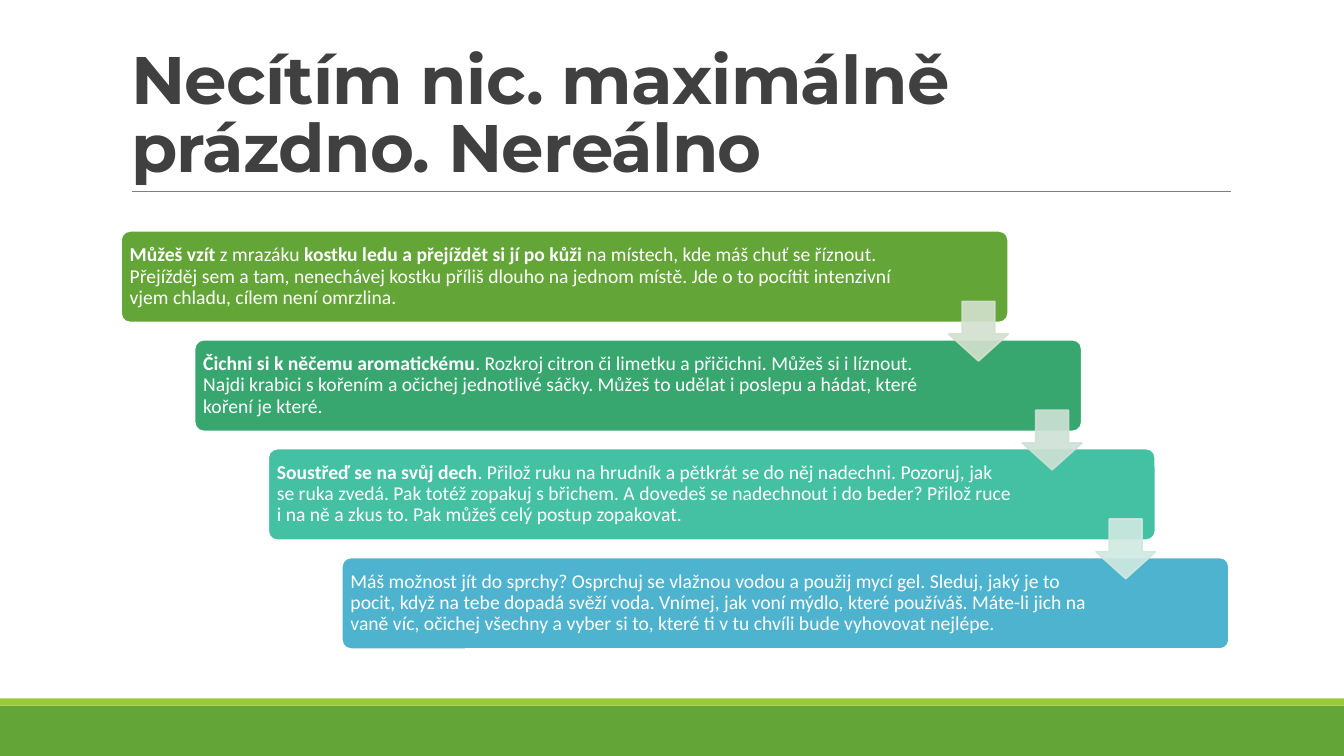
from dataclasses import dataclass

from lxml.etree import SubElement
from pptx import Presentation
from pptx.dml.color import RGBColor
from pptx.enum.shapes import MSO_CONNECTOR, MSO_SHAPE
from pptx.enum.text import MSO_ANCHOR, MSO_AUTO_SIZE, PP_ALIGN
from pptx.oxml.ns import qn
from pptx.util import Inches, Pt

COLORS = {
    "green": "63A537",
    "lime": "99CB38",
    "emerald": "37A76F",
    "teal": "44C1A3",
    "blue": "4EB3CF",
    "green_pale": "D3E1CE",
    "emerald_pale": "CEE1D5",
    "teal_pale": "CFE9E0",
    "rule": "808080",
    "title": "404040",
    "white": "FFFFFF",
}
STEP_X, STEP_Y = 0.73, 1.08


@dataclass
class Run:
    text: str
    bold: bool = False


@dataclass
class Step:
    color: str
    runs: list[Run]
    margin_right: float = 1.38


STEPS = [
    Step("green", [
        Run("Můžeš vzít", True),
        Run(" z mrazáku "),
        Run("kostku ledu a přejíždět si jí po kůži", True),
        Run(" na místech, kde máš chuť se říznout. Přejížděj sem a tam, "
            "nenechávej kostku příliš dlouho na jednom místě. Jde o to pocítit "
            "intenzivní vjem chladu, cílem není omrzlina."),
    ], 1.06),
    Step("emerald", [
        Run("Čichni si k něčemu aromatickému", True),
        Run(". Rozkroj citron či limetku a přičichni. Můžeš si i líznout. "
            "Najdi krabici s kořením a očichej jednotlivé sáčky. Můžeš to "
            "udělat i poslepu a hádat, které koření je které."),
    ]),
    Step("teal", [
        Run("Soustřeď se na svůj dech", True),
        Run(". Přilož ruku na hrudník a pětkrát se do něj nadechni. Pozoruj, "
            "jak se ruka zvedá. Pak totéž zopakuj s břichem. A dovedeš se "
            "nadechnout i do beder? Přilož ruce i na ně a zkus to. Pak můžeš "
            "celý postup zopakovat."),
    ]),
    Step("blue", [
        Run("Máš možnost jít do sprchy? Osprchuj se vlažnou vodou a použij "
            "mycí gel. Sleduj, jaký je to pocit, když na tebe dopadá svěží "
            "voda. Vnímej, jak voní mýdlo, které používáš. Máte-li jich na "
            "vaně víc, očichej všechny a vyber si to, které ti v tu chvíli "
            "bude vyhovovat nejlépe."),
    ]),
]
ARROW_COLORS = ["green_pale", "emerald_pale", "teal_pale"]


def rgb(name: str) -> RGBColor:
    return RGBColor.from_string(COLORS[name])


def add_filled(slide, kind, left: float, top: float, width: float, height: float,
               fill: str, line: str | None = None):
    shape = slide.shapes.add_shape(
        kind, Inches(left), Inches(top), Inches(width), Inches(height))
    shape.shadow.inherit = False
    shape.fill.solid()
    shape.fill.fore_color.rgb = rgb(fill)
    if line:
        shape.line.color.rgb = rgb(line)
        shape.line.width = Pt(1.25)
    else:
        shape.line.fill.background()
    return shape


def add_title(slide, text: str) -> None:
    title = slide.shapes.title
    title.left, title.top = Inches(1.2), Inches(0.31)
    title.width, title.height = Inches(11), Inches(1.59)
    frame = title.text_frame
    frame.text = text
    frame.word_wrap = True
    frame.auto_size = MSO_AUTO_SIZE.NONE
    frame.vertical_anchor = MSO_ANCHOR.BOTTOM
    paragraph = frame.paragraphs[0]
    paragraph.alignment = PP_ALIGN.LEFT
    paragraph.line_spacing = 0.85
    font = paragraph.font
    font.name, font.size, font.bold = "Montserrat", Pt(48), True
    font.color.rgb = rgb("title")
    paragraph.runs[0].font._element.set("spc", "-50")


def add_rule(slide) -> None:
    rule = slide.shapes.add_connector(
        MSO_CONNECTOR.STRAIGHT, Inches(1.31), Inches(1.9), Inches(12.21), Inches(1.9))
    rule.line.color.rgb = rgb("rule")
    rule.line.width = Pt(0.5)
    SubElement(rule._element.spPr, qn("a:effectLst"))


def add_step(slide, index: int, step: Step) -> None:
    box = add_filled(slide, MSO_SHAPE.ROUNDED_RECTANGLE, 1.2 + index * STEP_X,
                     2.29 + index * STEP_Y, 8.8, 0.91, step.color, "white")
    box.adjustments[0] = 0.1
    frame = box.text_frame
    frame.word_wrap = True
    frame.vertical_anchor = MSO_ANCHOR.MIDDLE
    frame.margin_left = frame.margin_top = frame.margin_bottom = Inches(0.06)
    frame.margin_right = Inches(step.margin_right)
    paragraph = frame.paragraphs[0]
    paragraph.alignment = PP_ALIGN.LEFT
    paragraph.line_spacing = 0.9
    paragraph.font.name, paragraph.font.size = "Calibri", Pt(14)
    paragraph.font.color.rgb = rgb("white")
    for item in step.runs:
        run = paragraph.add_run()
        run.text = item.text
        run.font.bold = item.bold


def add_arrow(slide, index: int, color: str) -> None:
    arrow = add_filled(slide, MSO_SHAPE.DOWN_ARROW, 9.41 + index * STEP_X,
                       2.99 + index * STEP_Y, 0.59, 0.59, color, color)
    arrow.adjustments[0], arrow.adjustments[1] = 0.55, 0.45
    for tint in arrow._element.spPr.iter(qn("a:srgbClr")):
        SubElement(tint, qn("a:alpha")).set("val", "90000")


def main() -> None:
    presentation = Presentation()
    presentation.slide_width = Inches(13.33)
    presentation.slide_height = Inches(7.5)
    slide = presentation.slides.add_slide(presentation.slide_layouts[5])
    add_filled(slide, MSO_SHAPE.RECTANGLE, 0, 7, 13.33, 0.5, "green")
    add_filled(slide, MSO_SHAPE.RECTANGLE, 0, 6.93, 13.33, 0.07, "lime")
    add_rule(slide)
    add_title(slide, "Necítím nic. maximálně prázdno. Nereálno")
    for index, step in enumerate(STEPS):
        add_step(slide, index, step)
    for index, color in enumerate(ARROW_COLORS):
        add_arrow(slide, index, color)
    presentation.save("out.pptx")


if __name__ == "__main__":
    main()
